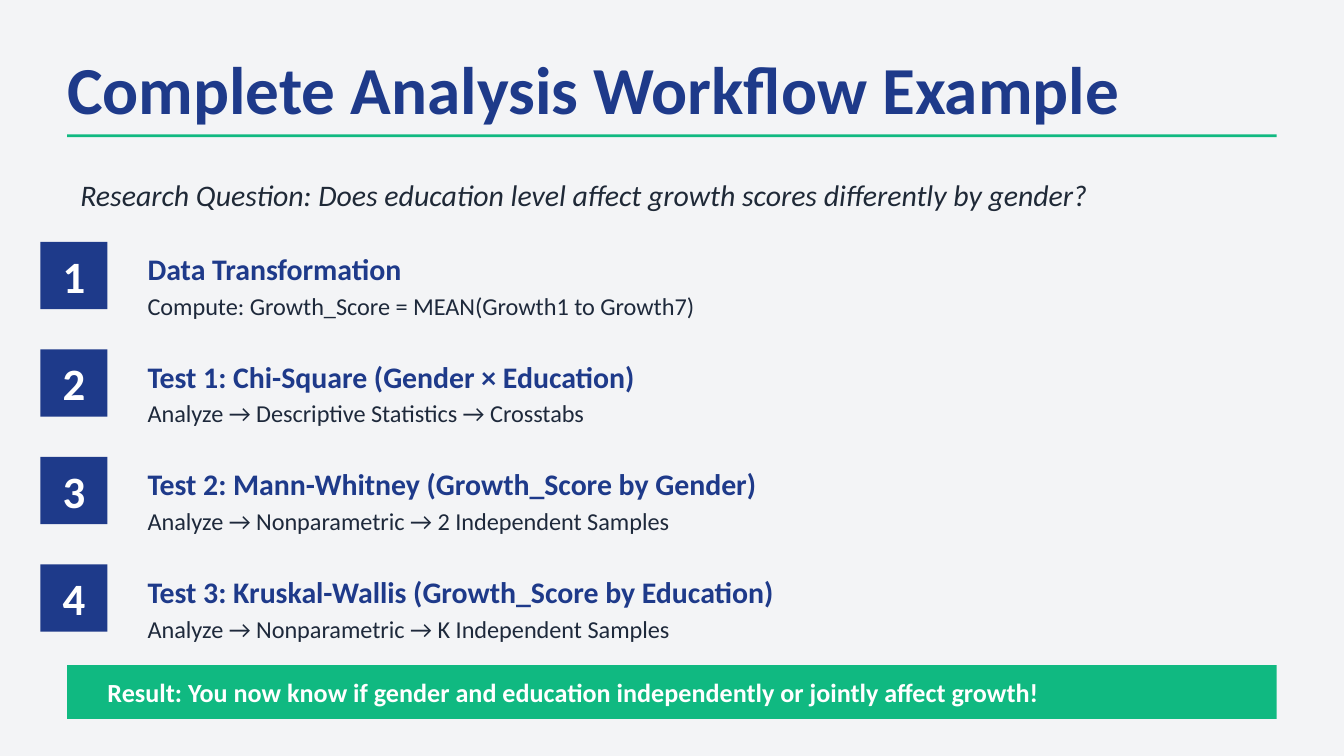
from dataclasses import dataclass

from pptx import Presentation
from pptx.dml.color import RGBColor
from pptx.enum.shapes import MSO_SHAPE
from pptx.enum.text import MSO_ANCHOR, MSO_AUTO_SIZE, PP_ALIGN
from pptx.shapes.autoshape import Shape
from pptx.slide import Slide
from pptx.text.text import TextFrame
from pptx.util import Inches, Pt

BACKGROUND = RGBColor(0xF3, 0xF4, 0xF6)
NAVY = RGBColor(0x1E, 0x3A, 0x8A)
GREEN = RGBColor(0x10, 0xB9, 0x81)
WHITE = RGBColor(0xFF, 0xFF, 0xFF)
QUESTION_GREY = RGBColor(0x1F, 0x29, 0x37)
DETAIL_GREY = RGBColor(0x1E, 0x29, 0x3B)

FONT = "Calibri"
SLIDE_WIDTH = 10
SLIDE_HEIGHT = SLIDE_WIDTH * 9 / 16
MARGIN = 0.5
CONTENT_WIDTH = SLIDE_WIDTH - 2 * MARGIN
FIRST_STEP_TOP = 1.8
STEP_PITCH = 0.8


@dataclass(frozen=True)
class Box:
    left: float
    top: float
    width: float
    height: float


@dataclass(frozen=True)
class TextStyle:
    size: float
    color: RGBColor
    bold: bool = False
    italic: bool = False
    align: PP_ALIGN = PP_ALIGN.LEFT


@dataclass(frozen=True)
class Step:
    heading: str
    detail: str


TITLE = TextStyle(36, NAVY, bold=True)
QUESTION = TextStyle(16, QUESTION_GREY, italic=True)
NUMBER = TextStyle(24, WHITE, bold=True, align=PP_ALIGN.CENTER)
HEADING = TextStyle(16, NAVY, bold=True)
DETAIL = TextStyle(13, DETAIL_GREY)
RESULT = TextStyle(14, WHITE, bold=True)

STEPS = [
    Step("Data Transformation", "Compute: Growth_Score = MEAN(Growth1 to Growth7)"),
    Step("Test 1: Chi-Square (Gender × Education)",
         "Analyze → Descriptive Statistics → Crosstabs"),
    Step("Test 2: Mann-Whitney (Growth_Score by Gender)",
         "Analyze → Nonparametric → 2 Independent Samples"),
    Step("Test 3: Kruskal-Wallis (Growth_Score by Education)",
         "Analyze → Nonparametric → K Independent Samples"),
]


def lengths(box: Box) -> tuple:
    return Inches(box.left), Inches(box.top), Inches(box.width), Inches(box.height)


def write(frame: TextFrame, text: str, style: TextStyle) -> None:
    frame.word_wrap = True
    frame.auto_size = MSO_AUTO_SIZE.NONE
    frame.vertical_anchor = MSO_ANCHOR.MIDDLE
    paragraph = frame.paragraphs[0]
    paragraph.alignment = style.align
    run = paragraph.add_run()
    run.text = text
    run.font.name = FONT
    run.font.size = Pt(style.size)
    run.font.bold = style.bold
    run.font.italic = style.italic
    run.font.color.rgb = style.color


def add_text(slide: Slide, box: Box, text: str, style: TextStyle) -> None:
    write(slide.shapes.add_textbox(*lengths(box)).text_frame, text, style)


def add_rectangle(slide: Slide, box: Box, color: RGBColor) -> Shape:
    shape = slide.shapes.add_shape(MSO_SHAPE.RECTANGLE, *lengths(box))
    shape.shadow.inherit = False
    shape.fill.solid()
    shape.fill.fore_color.rgb = color
    shape.line.fill.background()
    return shape


def add_title(slide: Slide, text: str) -> None:
    title = slide.shapes.title
    title.left, title.top, title.width, title.height = lengths(
        Box(MARGIN, 0.4, CONTENT_WIDTH, 0.5))
    frame = title.text_frame
    frame.margin_left = frame.margin_right = 0
    frame.margin_top = frame.margin_bottom = 0
    write(frame, text, TITLE)
    add_rectangle(slide, Box(MARGIN, 1, CONTENT_WIDTH, 0.02), GREEN)


def add_step(slide: Slide, number: int, step: Step) -> None:
    top = round(FIRST_STEP_TOP + (number - 1) * STEP_PITCH, 2)
    square = add_rectangle(slide, Box(0.3, top, 0.5, 0.5), NAVY)
    write(square.text_frame, str(number), NUMBER)
    add_text(slide, Box(1, top + 0.05, 8.5, 0.3), step.heading, HEADING)
    add_text(slide, Box(1, top + 0.35, 8.5, 0.25), step.detail, DETAIL)


def add_result(slide: Slide, text: str) -> None:
    bar = add_rectangle(slide, Box(MARGIN, 4.95, CONTENT_WIDTH, 0.4), GREEN)
    bar.text_frame.margin_left = Inches(0.3)
    write(bar.text_frame, text, RESULT)


def main() -> None:
    presentation = Presentation()
    presentation.slide_width = Inches(SLIDE_WIDTH)
    presentation.slide_height = Inches(SLIDE_HEIGHT)
    title_only = presentation.slide_layouts.get_by_name("Title Only")
    slide = presentation.slides.add_slide(title_only)
    slide.background.fill.solid()
    slide.background.fill.fore_color.rgb = BACKGROUND

    add_title(slide, "Complete Analysis Workflow Example")
    add_text(slide, Box(MARGIN, 1.25, CONTENT_WIDTH, 0.4),
             "Research Question: Does education level affect growth scores "
             "differently by gender?", QUESTION)
    for number, step in enumerate(STEPS, start=1):
        add_step(slide, number, step)
    add_result(slide, "Result: You now know if gender and education "
                      "independently or jointly affect growth!")
    presentation.save("out.pptx")


if __name__ == "__main__":
    main()
